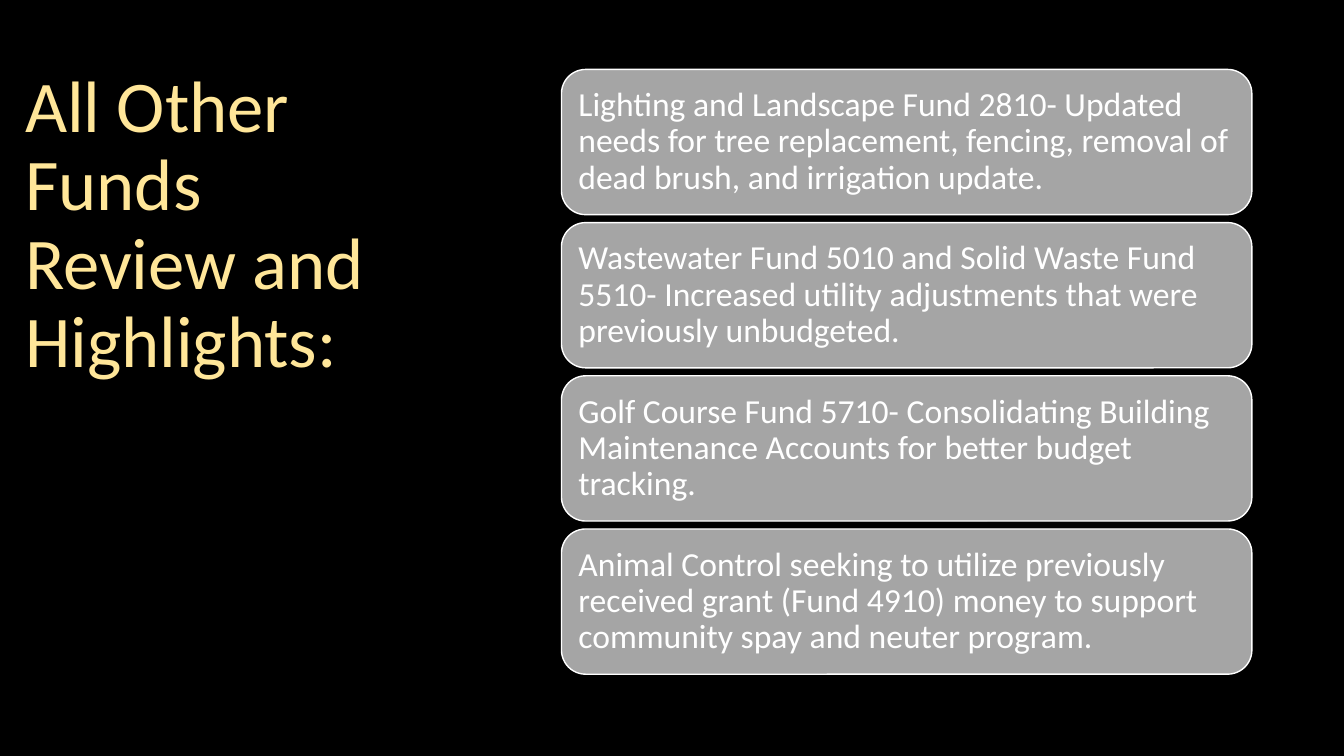
from pptx import Presentation
from pptx.dml.color import RGBColor
from pptx.enum.shapes import MSO_SHAPE
from pptx.enum.text import MSO_ANCHOR, MSO_AUTO_SIZE, PP_ALIGN
from pptx.util import Cm, Pt

BLACK = RGBColor(0x00, 0x00, 0x00)
WHITE = RGBColor(0xFF, 0xFF, 0xFF)
GRAY = RGBColor(0xA5, 0xA5, 0xA5)
CREAM = RGBColor(0xFF, 0xE6, 0x99)

HEADING = "All Other Funds Review and Highlights:"
HIGHLIGHTS = [
    "Lighting and Landscape Fund 2810- Updated needs for tree replacement, "
    "fencing, removal of dead brush, and irrigation update.",
    "Wastewater Fund 5010 and Solid Waste Fund 5510- Increased utility "
    "adjustments that were previously unbudgeted.",
    "Golf Course Fund 5710- Consolidating Building Maintenance Accounts "
    "for better budget tracking.",
    "Animal Control seeking to utilize previously received grant "
    "(Fund 4910) money to support community spay and neuter program.",
]
FIRST_TOP = 1.75
PITCH = 3.86


def write_text(frame, text, size, color):
    frame.text = text
    frame.word_wrap = True
    frame.auto_size = MSO_AUTO_SIZE.NONE
    frame.vertical_anchor = MSO_ANCHOR.MIDDLE
    paragraph = frame.paragraphs[0]
    paragraph.alignment = PP_ALIGN.LEFT
    paragraph.line_spacing = 0.9
    paragraph.font.name = "Calibri"
    paragraph.font.size = Pt(size)
    paragraph.font.color.rgb = color
    return paragraph


def add_heading(slide):
    heading = slide.shapes.title
    heading.left, heading.top = Cm(0.38), Cm(0.79)
    heading.width, heading.height = Cm(9.37), Cm(9.83)
    paragraph = write_text(heading.text_frame, HEADING, 52, CREAM)
    paragraph.space_after = Pt(6)


def add_highlight(slide, top, text):
    card = slide.shapes.add_shape(
        MSO_SHAPE.ROUNDED_RECTANGLE, Cm(14.15), Cm(top), Cm(17.4), Cm(3.66)
    )
    card.shadow.inherit = False
    card.fill.solid()
    card.fill.fore_color.rgb = GRAY
    card.line.color.rgb = WHITE
    card.line.width = Pt(1)
    frame = card.text_frame
    frame.margin_left = frame.margin_right = Cm(0.25)
    frame.margin_top = frame.margin_bottom = Cm(0.25)
    write_text(frame, text, 24, WHITE)


def main():
    presentation = Presentation()
    presentation.slide_width = Cm(33.87)
    presentation.slide_height = Cm(19.05)
    slide = presentation.slides.add_slide(presentation.slide_layouts[5])
    slide.background.fill.solid()
    slide.background.fill.fore_color.rgb = BLACK
    add_heading(slide)
    for row, text in enumerate(HIGHLIGHTS):
        add_highlight(slide, FIRST_TOP + row * PITCH, text)
    presentation.save("out.pptx")


if __name__ == "__main__":
    main()
